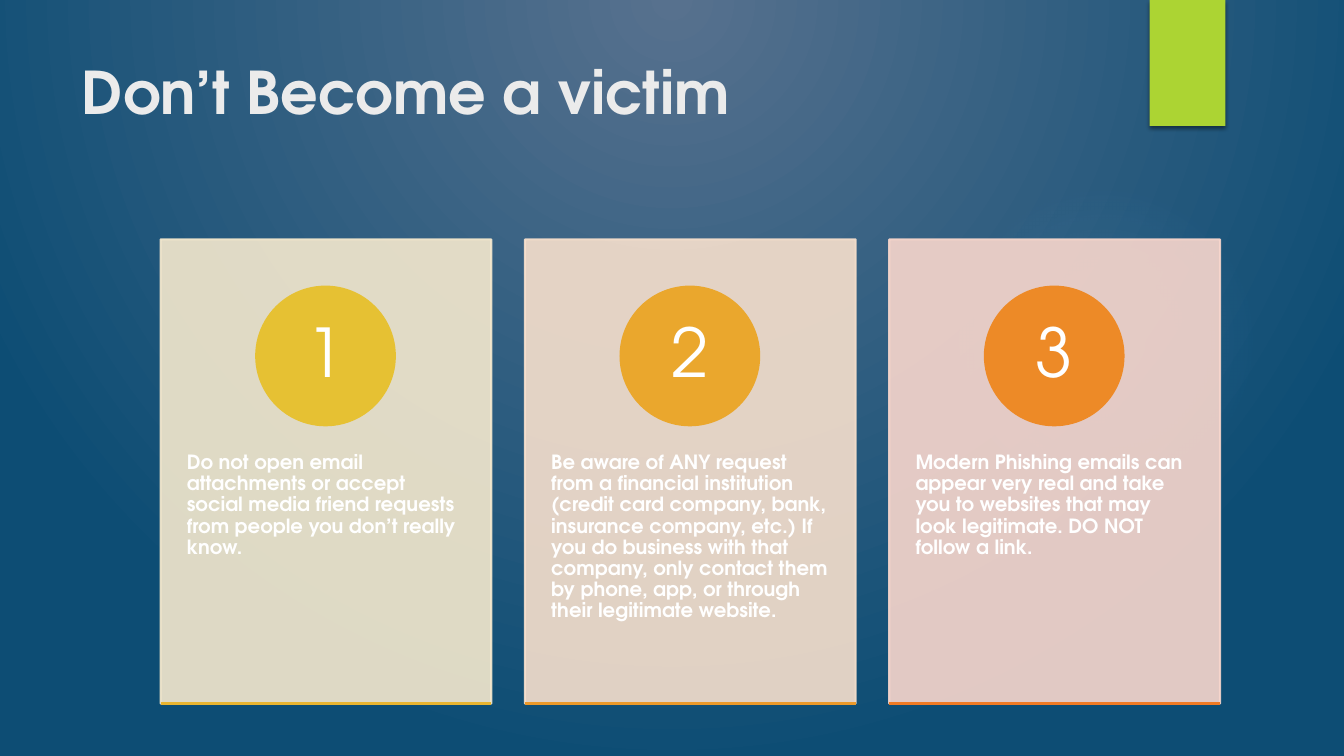
from pptx import Presentation
from pptx import util as u
from pptx.dml.color import RGBColor
from pptx.enum import shapes, text
from pptx.oxml import parse_xml
from pptx.oxml.ns import nsdecls, qn

COLOURS = {
    "centre": "57718E", "edge": "0D4D74", "glow": "7AC4F0", "ribbon": "ACD433",
    "title": "EBEBEB", "white": "FFFFFF", "shadow": "000000",
}
CARDS = [
    ("F5E9CE", "E6C133", "E8B430",
     "Do not open email attachments or accept social media friend requests "
     "from people you don’t really know."),
    ("F7E0CD", "EAA72D", "EB992A",
     "Be aware of ANY request from a financial institution (credit card company, "
     "bank, insurance company, etc.) If you do business with that company, only "
     "contact them by phone, app, or through their legitimate website."),
    ("F9D7CD", "ED8A27", "EF7A24",
     "Modern Phishing emails can appear very real and take you to websites that "
     "may look legitimate. DO NOT follow a link."),
]
CARD_LEFT, CARD_TOP, CARD_WIDTH, CARD_HEIGHT, CARD_PITCH = 153, 228, 315, 442, 347
CIRCLE_SIZE, NUMBER_SIZE = 132, 94


class SlideBuilder:
    font = "TeX Gyre Adventor"
    scale = 9525

    def __init__(self):
        self.presentation = Presentation()
        self.presentation.slide_width = self.px(1280)
        self.presentation.slide_height = self.px(720)
        self.slide = self.presentation.slides.add_slide(self.presentation.slide_layouts[6])

    def px(self, length):
        return u.Emu(length * self.scale)

    def box(self, *lengths):
        return [self.px(length) for length in lengths]

    def colour(self, name):
        return RGBColor.from_string(COLOURS.get(name, name))

    def radial(self, stops, focus):
        marks = "".join(
            f'<a:gs pos="{position * 1000}"><a:srgbClr val="{COLOURS[name]}">'
            f'<a:alpha val="{alpha * 1000}"/></a:srgbClr></a:gs>'
            for position, name, alpha in stops)
        sides = " ".join(f'{side}="{value * 1000}"' for side, value in zip("ltrb", focus))
        return parse_xml(
            f'<a:gradFill {nsdecls("a")} rotWithShape="1"><a:gsLst>{marks}</a:gsLst>'
            f'<a:path path="circle"><a:fillToRect {sides}/></a:path></a:gradFill>')

    def use_gradient(self, fill, owner, gradient):
        fill.solid()
        solid = owner.find(qn("a:solidFill"))
        owner.replace(solid, gradient)

    def background(self, stops, focus):
        fill = self.slide.background.fill
        fill.solid()
        owner = self.slide.element.find(".//" + qn("p:bgPr"))
        self.use_gradient(fill, owner, self.radial(stops, focus))

    def shape(self, kind, bounds, fill, outlined=False, opacity=100):
        shape = self.slide.shapes.add_shape(kind, *self.box(*bounds))
        shape.shadow.inherit = False
        shape.fill.solid()
        shape.fill.fore_color.rgb = self.colour(fill)
        if outlined:
            shape.line.color.rgb = self.colour(fill)
            shape.line.width = u.Pt(1.5)
        else:
            shape.line.fill.background()
        if opacity < 100:
            for colour in shape.element.spPr.iter(qn("a:srgbClr")):
                colour.append(parse_xml(f'<a:alpha {nsdecls("a")} val="{opacity * 1000}"/>'))
        return shape

    def glow(self, bounds, stops, focus):
        shape = self.shape(shapes.MSO_SHAPE.OVAL, bounds, "glow")
        self.use_gradient(shape.fill, shape.element.spPr, self.radial(stops, focus))

    def ribbon(self, bounds):
        shape = self.shape(shapes.MSO_SHAPE.RECTANGLE, bounds, "ribbon")
        effects = shape.element.spPr.find(qn("a:effectLst"))
        effects.append(parse_xml(
            f'<a:outerShdw {nsdecls("a")} blurRad="38100" dist="25400" dir="5400000" '
            f'rotWithShape="0"><a:srgbClr val="{COLOURS["shadow"]}">'
            '<a:alpha val="45000"/></a:srgbClr></a:outerShdw>'))

    def line(self, left, top, right, bottom, colour):
        connector = self.slide.shapes.add_connector(
            shapes.MSO_CONNECTOR.STRAIGHT, *self.box(left, top, right, bottom))
        connector.line.color.rgb = self.colour(colour)
        connector.line.width = u.Pt(1.5)
        connector.element.spPr.append(parse_xml(f'<a:effectLst {nsdecls("a")}/>'))

    def text(self, bounds, words, size, colour="white", bold=False, insets=(10, 5),
             centred=False, spacing=0.9):
        frame = self.slide.shapes.add_textbox(*self.box(*bounds)).text_frame
        frame.word_wrap = True
        frame.margin_left = frame.margin_right = self.px(insets[0])
        frame.margin_top = frame.margin_bottom = self.px(insets[1])
        frame.vertical_anchor = text.MSO_ANCHOR.MIDDLE if centred else text.MSO_ANCHOR.TOP
        paragraph = frame.paragraphs[0]
        paragraph.alignment = text.PP_ALIGN.CENTER if centred else text.PP_ALIGN.LEFT
        paragraph.line_spacing = spacing
        run = paragraph.add_run()
        run.text = words
        run.font.name = self.font
        run.font.size = u.Pt(size)
        run.font.bold = bold
        run.font.color.rgb = self.colour(colour)

    def card(self, index, panel, circle, accent, advice):
        left = CARD_LEFT + index * CARD_PITCH
        bottom = CARD_TOP + CARD_HEIGHT
        circle_left = left + (CARD_WIDTH - CIRCLE_SIZE) // 2
        circle_top = CARD_TOP + 45
        inset = (CIRCLE_SIZE - NUMBER_SIZE) // 2
        self.shape(shapes.MSO_SHAPE.RECTANGLE, (left, CARD_TOP, CARD_WIDTH, CARD_HEIGHT),
                   panel, outlined=True, opacity=90)
        self.text((left, CARD_TOP + 168, CARD_WIDTH, 265), advice, 14, bold=True,
                  insets=(25, 35))
        self.shape(shapes.MSO_SHAPE.OVAL, (circle_left, circle_top, CIRCLE_SIZE, CIRCLE_SIZE),
                   circle, outlined=True)
        self.text((circle_left + inset, circle_top + inset, NUMBER_SIZE, NUMBER_SIZE),
                  str(index + 1), 48, insets=(10, 1), centred=True)
        self.line(left, bottom, left + CARD_WIDTH, bottom, accent)


def main():
    builder = SlideBuilder()
    builder.background([(0, "centre", 100), (100, "edge", 100)], (43, 0, 43, 100))
    builder.glow((903, 176, 296, 296),
                 [(0, "glow", 7), (36, "glow", 6), (69, "glow", 0)], (50, 50, 50, 50))
    builder.ribbon((1095, 0, 72, 120))
    builder.text((68, 48, 988, 147), "Don’t Become a victim", 42, "title", bold=True,
                 spacing=1.0)
    for index, card in enumerate(CARDS):
        builder.card(index, *card)
    builder.presentation.save("out.pptx")


if __name__ == "__main__":
    main()
